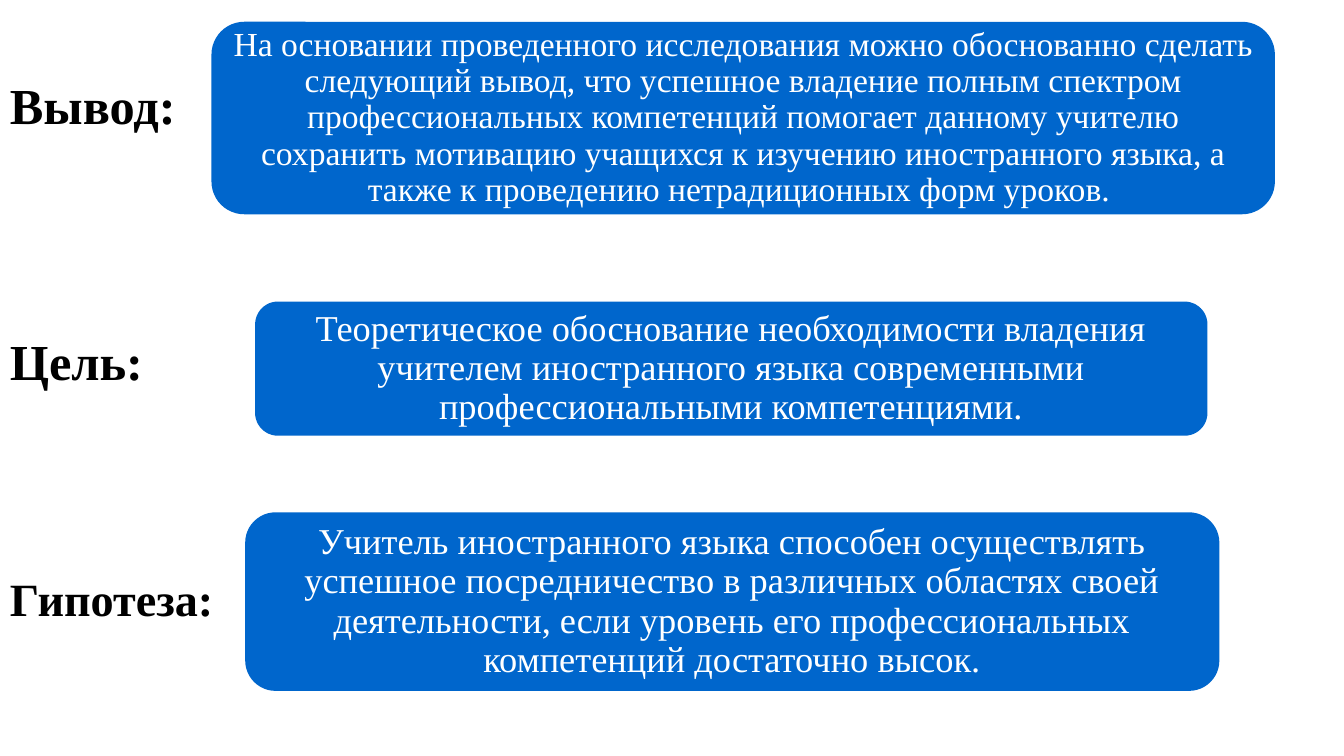
from pptx import Presentation
from pptx.dml.color import RGBColor
from pptx.enum.shapes import MSO_SHAPE
from pptx.enum.text import MSO_ANCHOR, PP_ALIGN
from pptx.util import Cm, Pt

BLUE = RGBColor(0x00, 0x66, 0xCC)
WHITE = RGBColor(0xFF, 0xFF, 0xFF)
BLACK = RGBColor(0x00, 0x00, 0x00)


def write(frame, text, size, color, bold=False, align=PP_ALIGN.LEFT,
          spacing=0.9, before=0, after=0):
    frame.word_wrap = True
    frame.vertical_anchor = MSO_ANCHOR.MIDDLE
    paragraph = frame.paragraphs[0]
    paragraph.alignment = align
    paragraph.line_spacing = spacing
    paragraph.space_before = Pt(before)
    paragraph.space_after = Pt(after)
    run = paragraph.add_run()
    run.text = text
    run.font.name = "Times New Roman"
    run.font.size = Pt(size)
    run.font.bold = bold
    run.font.color.rgb = color


presentation = Presentation()
presentation.slide_width = Cm(33.87)
presentation.slide_height = Cm(19.05)
slide = presentation.slides.add_slide(presentation.slide_layouts[6])

headings = [
    ("Вывод:", (0, 1.75, 4.95, 1.78), 36, 1.0, 4.8),
    ("Цель:", (0, 8.36, 4.04, 1.63), 36, 0.9, 0),
    ("Гипотеза:", (0, 14.07, 5.77, 2.18), 33, 0.9, 0),
]
for heading, place, size, spacing, before in headings:
    box = slide.shapes.add_textbox(*map(Cm, place))
    write(box.text_frame, heading, size, BLACK, bold=True,
          spacing=spacing, before=before)

statements = [
    ("На основании проведенного исследования можно обоснованно сделать "
     "следующий вывод, что успешное владение полным спектром "
     "профессиональных компетенций помогает данному учителю сохранить "
     "мотивацию учащихся к изучению иностранного языка, а также к "
     "проведению нетрадиционных форм уроков. ",
     (5.33, 0.55, 26.8, 4.85), 24, 0.28),
    ("Теоретическое обоснование необходимости владения учителем "
     "иностранного языка современными профессиональными компетенциями.",
     (6.43, 7.6, 24, 3.38), 26, 0.27),
    ("Учитель иностранного языка способен осуществлять успешное "
     "посредничество в различных областях своей деятельности, если "
     "уровень его профессиональных компетенций достаточно высок.",
     (6.18, 12.91, 24.55, 4.5), 26, 0.35),
]
for statement, place, size, margin in statements:
    panel = slide.shapes.add_shape(MSO_SHAPE.ROUNDED_RECTANGLE, *map(Cm, place))
    panel.adjustments[0] = 0.17
    panel.shadow.inherit = False
    panel.fill.solid()
    panel.fill.fore_color.rgb = BLUE
    panel.line.fill.background()
    frame = panel.text_frame
    frame.margin_left = frame.margin_right = Cm(margin)
    frame.margin_top = frame.margin_bottom = Cm(margin)
    write(frame, statement, size, WHITE, align=PP_ALIGN.CENTER, after=11)

presentation.save("out.pptx")
